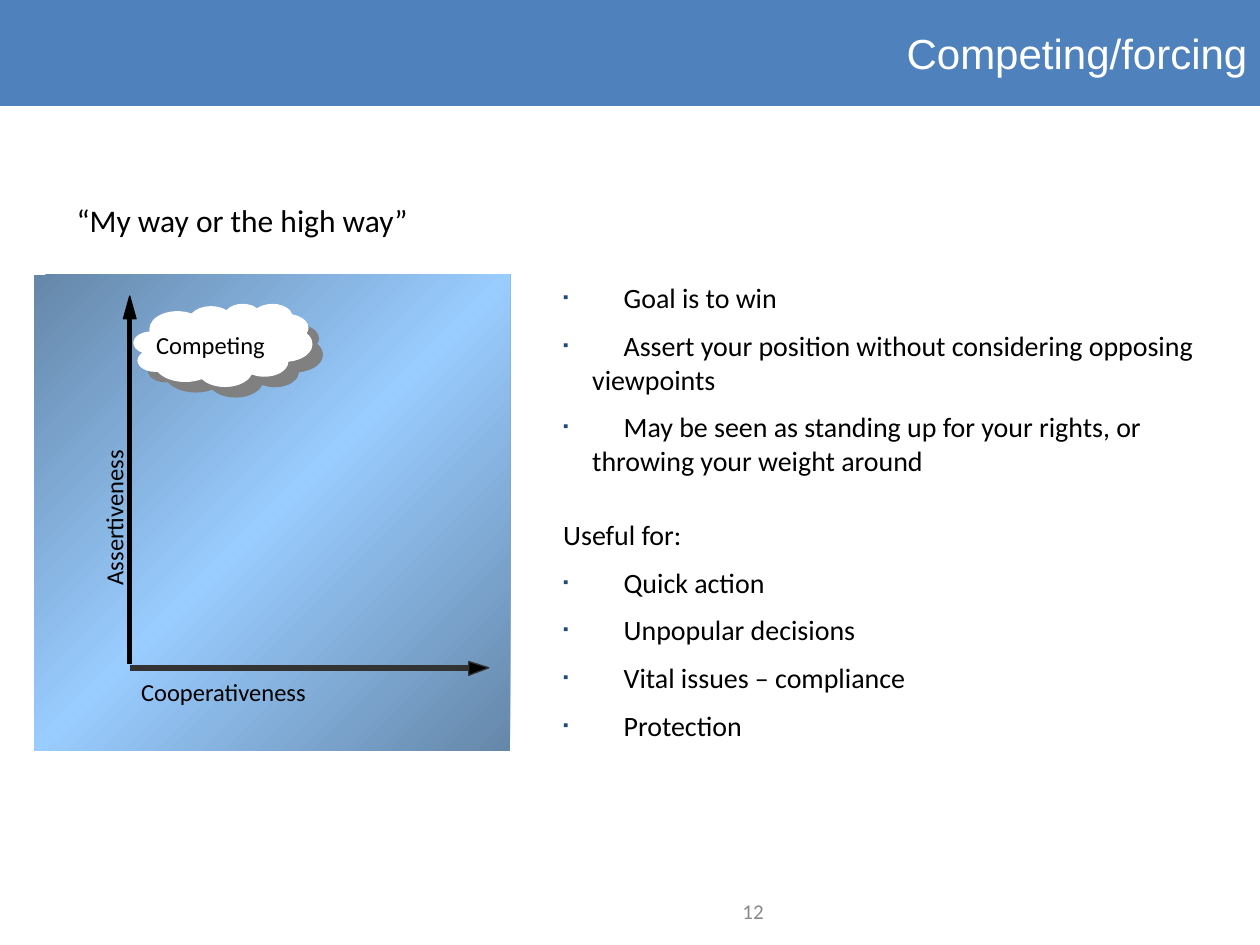
from copy import deepcopy
from dataclasses import dataclass

from lxml.etree import SubElement as Sub
from pptx import Presentation
from pptx.dml.color import RGBColor as Rgb
from pptx.enum.shapes import MSO_CONNECTOR as Line, MSO_SHAPE as Shape
from pptx.enum.text import MSO_ANCHOR as Anchor, MSO_AUTO_SIZE as Auto, PP_ALIGN as Align
from pptx.oxml.ns import qn
from pptx.util import Inches, Pt


@dataclass(frozen=True)
class Theme:
    head: str = "Arial"
    body: str = "Calibri"
    bar: Rgb = Rgb(0x4F, 0x81, 0xBD)
    edge: Rgb = Rgb(0x65, 0x87, 0xA9)
    glow: Rgb = Rgb(0x99, 0xCC, 0xFF)
    dark: Rgb = Rgb(0x33, 0x33, 0x33)
    ink: Rgb = Rgb(0, 0, 0)
    white: Rgb = Rgb(255, 255, 255)
    gray: Rgb = Rgb(0x89, 0x89, 0x89)
    shade: Rgb = Rgb(0x80, 0x80, 0x80)
    mark: Rgb = Rgb(0x1F, 0x49, 0x7D)
    title: int = 24
    quote: int = 18
    list: int = 16
    label: int = 14
    page: int = 12


theme = Theme()


def place(shape, box):
    shape.left, shape.top, shape.width, shape.height = map(Inches, box)


def write(para, text, size, color=theme.ink, face=theme.body):
    run = para.add_run()
    run.text = text
    run.font.size = Pt(size)
    run.font.name = face
    run.font.color.rgb = color


deck = Presentation()
deck.slide_width, deck.slide_height = Inches(10), Inches(7.5)
slide = deck.slides.add_slide(deck.slide_layouts[3])
shapes = slide.shapes

title = shapes.title
place(title, (0, 0, 10, 0.84))
title.fill.solid()
title.fill.fore_color.rgb = theme.bar
frame = title.text_frame
frame.auto_size = Auto.NONE
frame.vertical_anchor = Anchor.MIDDLE
frame.paragraphs[0].alignment = Align.RIGHT
write(frame.paragraphs[0], "Competing/forcing", theme.title, theme.white, theme.head)

panel = shapes.add_shape(Shape.RECTANGLE, *map(Inches, (0.27, 2.18, 3.78, 3.78)))
panel.shadow.inherit = False
panel.line.fill.background()
panel.fill.gradient()
panel.fill.gradient_angle = 315
stops = panel._element.spPr.find(".//" + qn("a:gsLst"))
stops.append(deepcopy(stops[0]))
hues = (theme.edge, theme.glow, theme.edge)
for step, (stop, hue) in enumerate(zip(panel.fill.gradient_stops, hues)):
    stop.position = step / 2
    stop.color.rgb = hue

axes = [
    ((1.03, 5.3), (3.8, 5.3), [(3.88, 5.3), (3.72, 5.25), (3.72, 5.36)], theme.dark),
    ((1.03, 5.27), (1.03, 2.44), [(1.03, 2.35), (0.98, 2.53), (1.08, 2.53)], theme.ink),
]
for start, end, tip, color in axes:
    axis = shapes.add_connector(Line.STRAIGHT, *map(Inches, start + end))
    axis.line.color.rgb = color
    axis.line.width = Pt(3.13)
    Sub(axis._element.spPr, qn("a:effectLst"))
    points = [tuple(map(Inches, point)) for point in tip]
    pen = shapes.build_freeform(*points[0])
    pen.add_line_segments(points[1:], close=True)
    head = pen.convert_to_shape()
    head.shadow.inherit = False
    head.fill.solid()
    head.fill.fore_color.rgb = theme.ink
    head.line.color.rgb = color
    head.line.width = Pt(0.75)

cloud = shapes.add_shape(Shape.CLOUD, *map(Inches, (1.06, 2.41, 1.42, 0.66)))
cloud.fill.solid()
cloud.fill.fore_color.rgb = theme.white
cloud.line.fill.background()
cloud.shadow.inherit = False
effects = cloud._element.spPr.find(qn("a:effectLst"))
shadow = Sub(effects, qn("a:outerShdw"), dist=str(Pt(8.5)), dir="2700000", algn="ctr", rotWithShape="0")
Sub(shadow, qn("a:srgbClr"), val=str(theme.shade))

labels = [
    ("Cooperativeness", (1.12, 5.37, 1.56, 0.23), theme.label, theme.ink, 0, 0),
    ("Assertiveness", (0.02, 3.65, 1.76, 0.23), theme.label, theme.ink, 0, 270),
    ("“My way or the high way”", (0.51, 1.55, 5.83, 0.4), theme.quote, theme.ink, 1, 0),
    ("Competing", (1.14, 2.57, 1.42, 0.33), theme.label, theme.ink, 1, 0),
    ("12", (3.83, 7.03, 2.33, 0.4), theme.page, theme.gray, 1, 0),
]
for text, box, size, color, pad, turn in labels:
    label = shapes.add_textbox(*map(Inches, box))
    label.rotation = turn
    frame = label.text_frame
    frame.word_wrap = True
    frame.margin_left = frame.margin_right = Inches(0.1 * pad)
    frame.margin_top = frame.margin_bottom = Inches(0.05 * pad)
    para = frame.paragraphs[0]
    if color == theme.gray:
        frame.vertical_anchor = Anchor.MIDDLE
        para.alignment = Align.RIGHT
    write(para, text, size, color)

goals = [
    "Goal is to win",
    "Assert your position without considering opposing viewpoints",
    "May be seen as standing up for your rights, or throwing your weight around",
]
uses = ["Quick action", "Unpopular decisions", "Vital issues – compliance", "Protection"]
lists = [
    (1, (4.37, 2.18, 5.63, 1.7), None, goals),
    (2, (4.37, 4.06, 5.04, 1.97), "Useful for:", uses),
]
for key, box, lead, items in lists:
    body = slide.placeholders[key]
    place(body, box)
    frame = body.text_frame
    frame.auto_size = Auto.NONE
    lines = ([lead] if lead else []) + items
    for row, text in enumerate(lines):
        para = frame.add_paragraph() if row else frame.paragraphs[0]
        para.space_before = Pt(8 if row else 0)
        props = para._p.get_or_add_pPr()
        if text == lead:
            props.set("marL", "0")
            props.set("indent", "0")
            Sub(props, qn("a:buNone"))
            write(para, text, theme.list)
            continue
        props.set("marL", str(Inches(0.23)))
        props.set("indent", str(Inches(-0.23)))
        Sub(Sub(props, qn("a:buClr")), qn("a:srgbClr"), val=str(theme.mark))
        Sub(props, qn("a:buSzPct"), val="55000")
        Sub(props, qn("a:buChar"), char="▪")
        Sub(Sub(props, qn("a:tabLst")), qn("a:tab"), pos=str(Inches(0.48)), algn="l")
        write(para, "\t" + text, theme.list)

deck.save("out.pptx")
